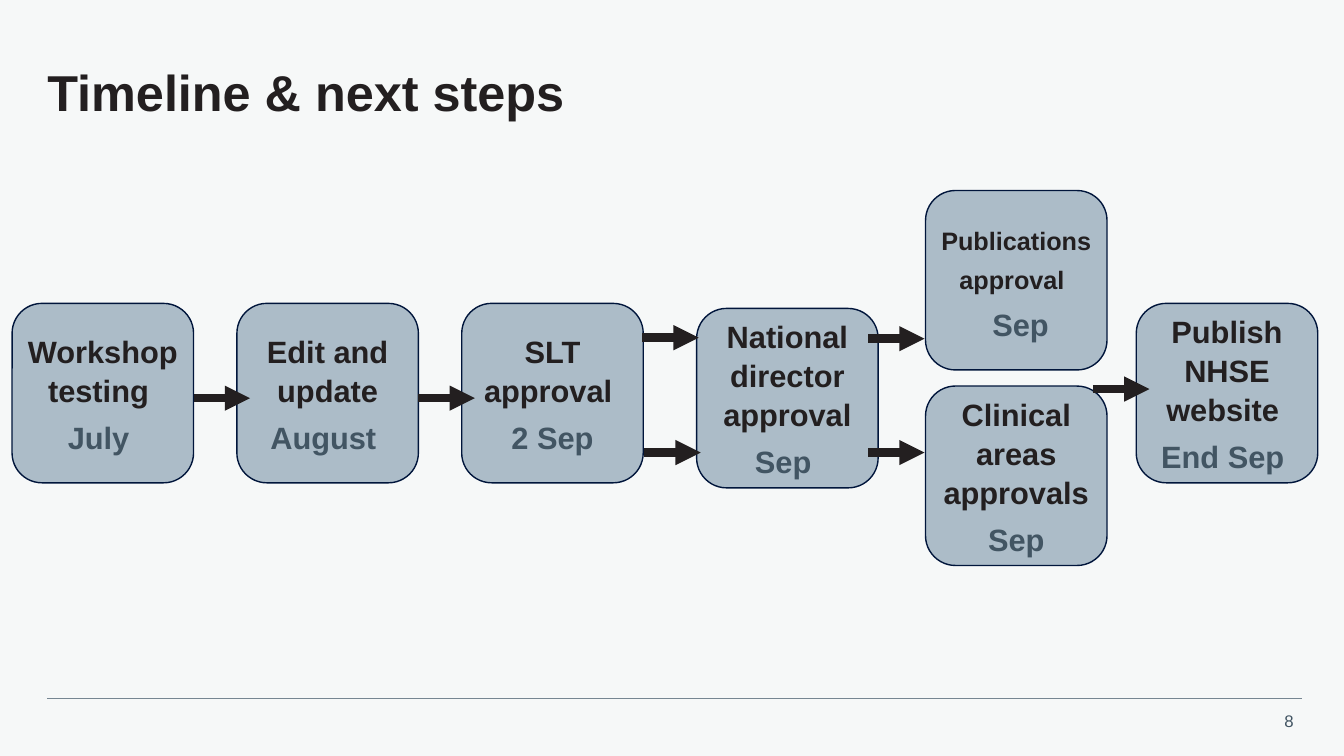
"""Build the timeline slide: seven approval steps joined by arrows."""
from dataclasses import dataclass

from lxml import etree
from pptx import Presentation
from pptx.dml.color import RGBColor
from pptx.enum.shapes import MSO_CONNECTOR, MSO_SHAPE
from pptx.enum.text import MSO_ANCHOR as Anchor, PP_ALIGN as Align
from pptx.oxml.ns import qn
from pptx.util import Inches, Pt

COLOURS = {
    "background": "F6F8F8",
    "box": "ACBCC8",
    "outline": "00153B",
    "text": "231F20",
    "date": "425563",
    "rule": "768692",
}
STEP_WIDTH, STEP_HEIGHT = 1.8, 1.78
STEP_SIZE = 22
ARROW_LENGTH = 0.56


@dataclass(frozen=True)
class Step:
    left: float
    top: float
    name: tuple[tuple[str, int], ...]
    date: str


@dataclass(frozen=True)
class Arrow:
    left: float
    top: float


STEPS = (
    Step(6.91, 3.06, (("National director approval", STEP_SIZE),), "Sep "),
    Step(0.12, 3.01, (("Workshop testing ", STEP_SIZE),), "July "),
    Step(2.35, 3.01, (("Edit and update", STEP_SIZE),), "August "),
    Step(4.58, 3.01, (("SLT approval ", STEP_SIZE),), "2 Sep"),
    Step(9.18, 3.83, (("Clinical areas approvals", STEP_SIZE),), "Sep"),
    Step(9.18, 1.89, (("Publications", 18), (" ", STEP_SIZE),
                      ("approval", 18), (" ", STEP_SIZE)), " Sep"),
    Step(11.27, 3.01, (("Publish NHSE website ", STEP_SIZE),), "End Sep "),
)
ARROWS = (
    Arrow(1.92, 3.95),
    Arrow(4.15, 3.95),
    Arrow(6.37, 3.35),
    Arrow(6.39, 4.49),
    Arrow(8.61, 3.36),
    Arrow(8.61, 4.49),
    Arrow(10.84, 3.86),
)


def colour(name: str) -> RGBColor:
    return RGBColor.from_string(COLOURS[name])


def add_run(paragraph, text: str, *, size: float, color: str, bold: bool = True) -> None:
    run = paragraph.add_run()
    run.text = text
    run.font.name = "Arial"
    run.font.size = Pt(size)
    run.font.bold = bold
    run.font.color.rgb = colour(color)


def set_frame(frame, *, inset: float = 0, wrap: bool = True) -> None:
    frame.word_wrap = wrap
    frame.vertical_anchor = Anchor.MIDDLE
    frame.margin_left = frame.margin_right = Inches(inset)
    frame.margin_top = frame.margin_bottom = Inches(inset / 2)


def add_label(slide, text: str, left: float, top: float, width: float, height: float, *,
              size: float, color: str, bold: bool, align: Align,
              inset: float = 0, spacing: float = 1.0) -> None:
    box = slide.shapes.add_textbox(Inches(left), Inches(top), Inches(width), Inches(height))
    set_frame(box.text_frame, inset=inset)
    paragraph = box.text_frame.paragraphs[0]
    paragraph.alignment = align
    paragraph.line_spacing = spacing
    add_run(paragraph, text, size=size, color=color, bold=bold)


def add_line(slide, left: float, top: float, length: float, *,
             color: str, weight: float, arrow: bool = False) -> None:
    line = slide.shapes.add_connector(
        MSO_CONNECTOR.STRAIGHT, Inches(left), Inches(top), Inches(left + length), Inches(top))
    line.line.color.rgb = colour(color)
    line.line.width = Pt(weight)
    if arrow:
        etree.SubElement(line.line._get_or_add_ln(), qn("a:tailEnd"), type="triangle")
    etree.SubElement(line._element.spPr, qn("a:effectLst"))


def add_step(slide, step: Step) -> None:
    shape = slide.shapes.add_shape(
        MSO_SHAPE.ROUNDED_RECTANGLE, Inches(step.left), Inches(step.top),
        Inches(STEP_WIDTH), Inches(STEP_HEIGHT))
    shape.shadow.inherit = False
    shape.fill.solid()
    shape.fill.fore_color.rgb = colour("box")
    shape.line.color.rgb = colour("outline")
    shape.line.width = Pt(1)
    frame = shape.text_frame
    set_frame(frame)
    name, date = frame.paragraphs[0], frame.add_paragraph()
    for paragraph in (name, date):
        paragraph.alignment = Align.CENTER
        paragraph.line_spacing = 1.05
        paragraph.space_after = Pt(6)
    for text, size in step.name:
        add_run(name, text, size=size, color="text")
    add_run(date, step.date, size=STEP_SIZE, color="date")


def main() -> None:
    presentation = Presentation()
    presentation.slide_width = Inches(13.33)
    presentation.slide_height = Inches(7.5)
    slide = presentation.slides.add_slide(presentation.slide_layouts[6])
    slide.background.fill.solid()
    slide.background.fill.fore_color.rgb = colour("background")

    add_label(slide, "Timeline & next steps", 0.47, 0.47, 12.47, 0.95,
              size=36, color="text", bold=True, align=Align.LEFT, spacing=0.9)
    for step in STEPS:
        add_step(slide, step)
    for arrow in ARROWS:
        add_line(slide, arrow.left, arrow.top, ARROW_LENGTH,
                 color="text", weight=6, arrow=True)
    add_line(slide, 0.47, 6.93, 12.44, color="rule", weight=0.5)
    add_label(slide, "8", 12.52, 7, 0.41, 0.3,
              size=12, color="date", bold=False, align=Align.RIGHT, inset=0.1)
    presentation.save("out.pptx")


if __name__ == "__main__":
    main()
